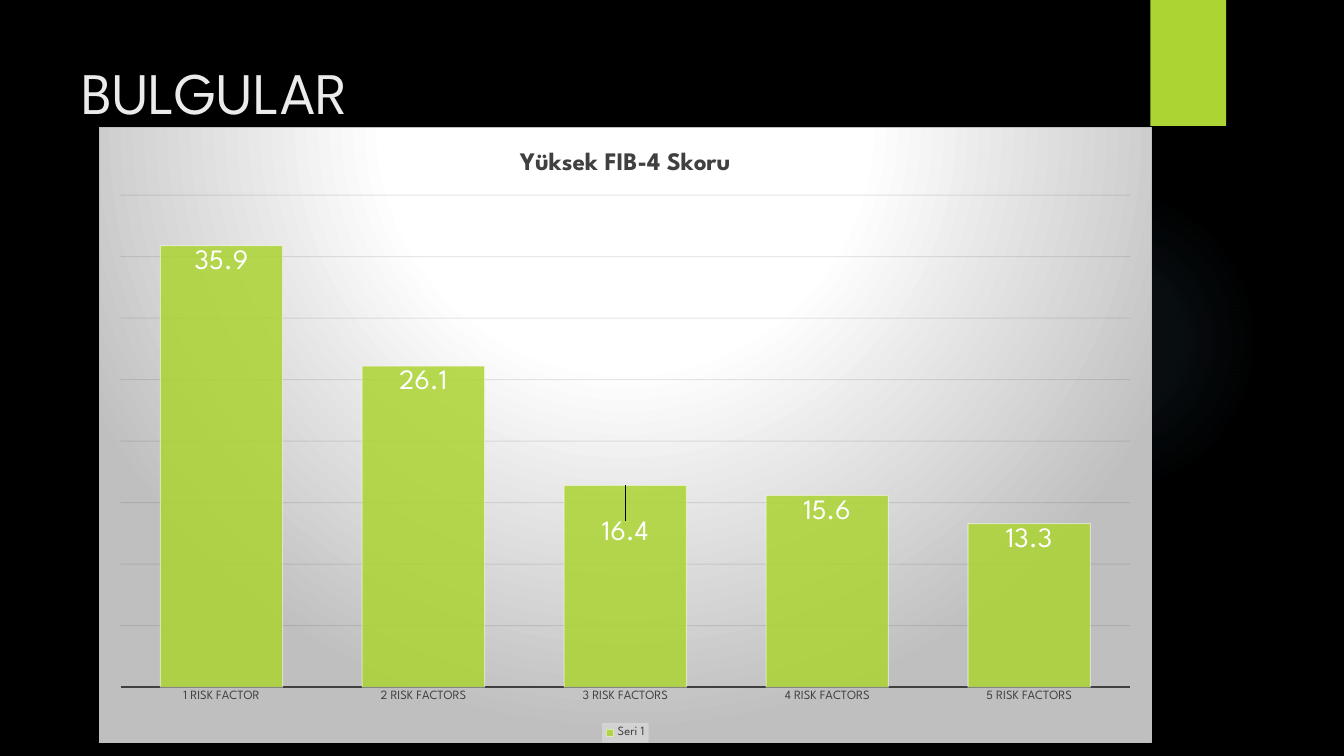
from dataclasses import dataclass

from pptx import Presentation
from pptx import util as u
from pptx.chart import data as cd
from pptx.dml import color as co
from pptx.enum import chart as ch, shapes, text
from pptx.oxml import parse_xml
from pptx.oxml import ns


@dataclass
class Theme:
    font: str = "League Spartan"
    black: str = "000000"
    green: str = "ACD433"
    title: str = "EBEBEB"
    dark: str = "404040"
    white: str = "FFFFFF"
    grey: str = "BFBFBF"
    grid: str = "0D0D0D"
    legend: str = "F2F2F2"
    glow: str = "7AC4F0"
    title_size: int = 42
    chart_title_size: int = 18
    label_size: int = 20
    axis_size: int = 9


def style(font, size, color, bold=False):
    font.name, font.size, font.bold = theme.font, u.Pt(size), bold
    font.color.rgb = co.RGBColor.from_string(color)


def radial(stops, left, top, right, bottom):
    """Circular gradient; stops are (position %, colour, opacity %)."""
    gs = "".join(
        f'<a:gs pos="{pos * 1000}"><a:srgbClr val="{c}">'
        f'<a:alpha val="{alpha * 1000}"/></a:srgbClr></a:gs>'
        for pos, c, alpha in stops)
    return (f'<a:gradFill {ns.nsdecls("a")} rotWithShape="1"><a:gsLst>{gs}</a:gsLst>'
            f'<a:path path="circle"><a:fillToRect l="{left * 1000}" t="{top * 1000}" '
            f'r="{right * 1000}" b="{bottom * 1000}"/></a:path></a:gradFill>')


theme = Theme()
rgb = co.RGBColor.from_string
prs = Presentation()
prs.slide_width, prs.slide_height = u.Pt(960), u.Pt(540)
s = prs.slides.add_slide(prs.slide_layouts[6])
s.background.fill.solid()
s.background.fill.fore_color.rgb = rgb(theme.black)

# Faint glow
sp = s.shapes.add_shape(shapes.MSO_SHAPE.OVAL, u.Pt(677.5), u.Pt(131.8), u.Pt(221.8), u.Pt(221.8))
sp.shadow.inherit = False
sp.line.fill.background()
sp.fill.background()
no_fill = sp.element.spPr.find(ns.qn("a:noFill"))
glow_stops = [(0, theme.glow, 7), (36, theme.glow, 6), (69, theme.glow, 0)]
sp.element.spPr.replace(no_fill, parse_xml(radial(glow_stops, 50, 50, 50, 50)))

# Green tab
sp = s.shapes.add_shape(shapes.MSO_SHAPE.RECTANGLE, u.Pt(821.8), u.Pt(0), u.Pt(54), u.Pt(90))
sp.fill.solid()
sp.fill.fore_color.rgb = rgb(theme.green)
sp.line.fill.background()
sp.shadow.inherit = False
sp.element.spPr.find(ns.qn("a:effectLst")).append(parse_xml(
    f'<a:outerShdw {ns.nsdecls("a")} blurRad="38100" dist="25400" dir="5400000" rotWithShape="0">'
    f'<a:srgbClr val="{theme.black}"><a:alpha val="45000"/></a:srgbClr></a:outerShdw>'))

# Title
tf = s.shapes.add_textbox(u.Pt(51), u.Pt(36), u.Pt(741), u.Pt(110)).text_frame
tf.word_wrap = True
tf.vertical_anchor = text.MSO_ANCHOR.TOP
tf.text = "BULGULAR"
style(tf.paragraphs[0].runs[0].font, theme.title_size, theme.title)

# Chart
data = cd.CategoryChartData(number_format="General")
data.categories = ["1 RISK FACTOR"] + [f"{n} RISK FACTORS" for n in range(2, 6)]
data.add_series("Seri 1", [35.9, 26.1, 16.4, 15.6, 13.3])
chart = s.shapes.add_chart(ch.XL_CHART_TYPE.COLUMN_CLUSTERED, u.Pt(70.7), u.Pt(90.8),
                           u.Pt(752), u.Pt(440), data).chart
style(chart.font, 10, theme.white)
chart.has_title = True
tf = chart.chart_title.text_frame
tf.text = "Yüksek FIB-4 Skoru"
style(tf.paragraphs[0].runs[0].font, theme.chart_title_size, theme.dark, True)
chart.chart_title.include_in_layout = False

# Chart background and plot area
c_chart = chart.element.find(ns.qn("c:chart"))
chart_stops = [(0, theme.white, 100), (39, theme.white, 100), (100, theme.grey, 100)]
c_chart.addnext(parse_xml(
    f'<c:spPr {ns.nsdecls("c", "a")}>{radial(chart_stops, 50, -80, 50, 180)}'
    f'<a:ln w="9525"><a:solidFill><a:srgbClr val="{theme.grey}"/></a:solidFill></a:ln></c:spPr>'))
plot_area = c_chart.find(ns.qn("c:plotArea"))
for layout in plot_area.findall(ns.qn("c:layout")):
    plot_area.remove(layout)
plot_area.insert(0, parse_xml(
    f'<c:layout {ns.nsdecls("c")}><c:manualLayout><c:layoutTarget val="inner"/>'
    '<c:xMode val="edge"/><c:yMode val="edge"/><c:x val="0.02"/><c:y val="0.11"/>'
    '<c:w val="0.96"/><c:h val="0.8"/></c:manualLayout></c:layout>'))

# Axes
axis = chart.category_axis
axis.major_tick_mark = ch.XL_TICK_MARK.NONE
axis.format.line.width = u.Pt(1.5)
axis.format.line.color.rgb = rgb(theme.dark)
style(axis.tick_labels.font, theme.axis_size, theme.dark)
axis = chart.value_axis
axis.minimum_scale, axis.maximum_scale, axis.major_unit = 0, 40, 5
axis.visible = False
line = axis.major_gridlines.format.line
line.width = u.Pt(0.75)
line.color.rgb = rgb(theme.grid)

# Columns
plot = chart.plots[0]
plot.gap_width = 65
plot.vary_by_categories = False
series = plot.series[0]
series.format.fill.solid()
series.format.fill.fore_color.rgb = rgb(theme.green)
series.format.line.width = u.Pt(0.75)
series.format.line.color.rgb = rgb(theme.white)

# Transparency of gridlines, columns and column outlines
column = series.format.fill.fore_color
series_pr = series._element.find(ns.qn("c:spPr"))
grid = plot_area.find(".//" + ns.qn("c:majorGridlines"))
for parent, alpha in ((grid.find(".//" + ns.qn("a:ln")), 10),
                      (series_pr, 85),
                      (series_pr.find(ns.qn("a:ln")), 50)):
    clr = parent.find(ns.qn("a:solidFill")).find(ns.qn("a:srgbClr"))
    clr.append(parse_xml(f'<a:alpha {ns.nsdecls("a")} val="{alpha * 1000}"/>'))

# Value labels, the third one set lower
labels = series.data_labels
labels.show_value = True
labels.position = ch.XL_LABEL_POSITION.INSIDE_END
style(labels.font, theme.label_size, theme.white)
label = series.points[2].data_label
style(label.font, theme.label_size, theme.white)
label.position = ch.XL_LABEL_POSITION.INSIDE_END
series._element.find(".//" + ns.qn("c:dLbl")).find(ns.qn("c:idx")).addnext(parse_xml(
    f'<c:layout {ns.nsdecls("c")}><c:manualLayout><c:x val="0"/><c:y val="0.05"/>'
    '</c:manualLayout></c:layout>'))

# Legend
chart.has_legend = True
legend = chart.legend
legend.position = ch.XL_LEGEND_POSITION.BOTTOM
legend.include_in_layout = False
style(legend.font, theme.axis_size, theme.dark)
c_chart.find(ns.qn("c:legend")).find(ns.qn("c:txPr")).addprevious(parse_xml(
    f'<c:spPr {ns.nsdecls("c", "a")}><a:solidFill><a:srgbClr val="{theme.legend}">'
    '<a:alpha val="39000"/></a:srgbClr></a:solidFill></c:spPr>'))

prs.save("out.pptx")
